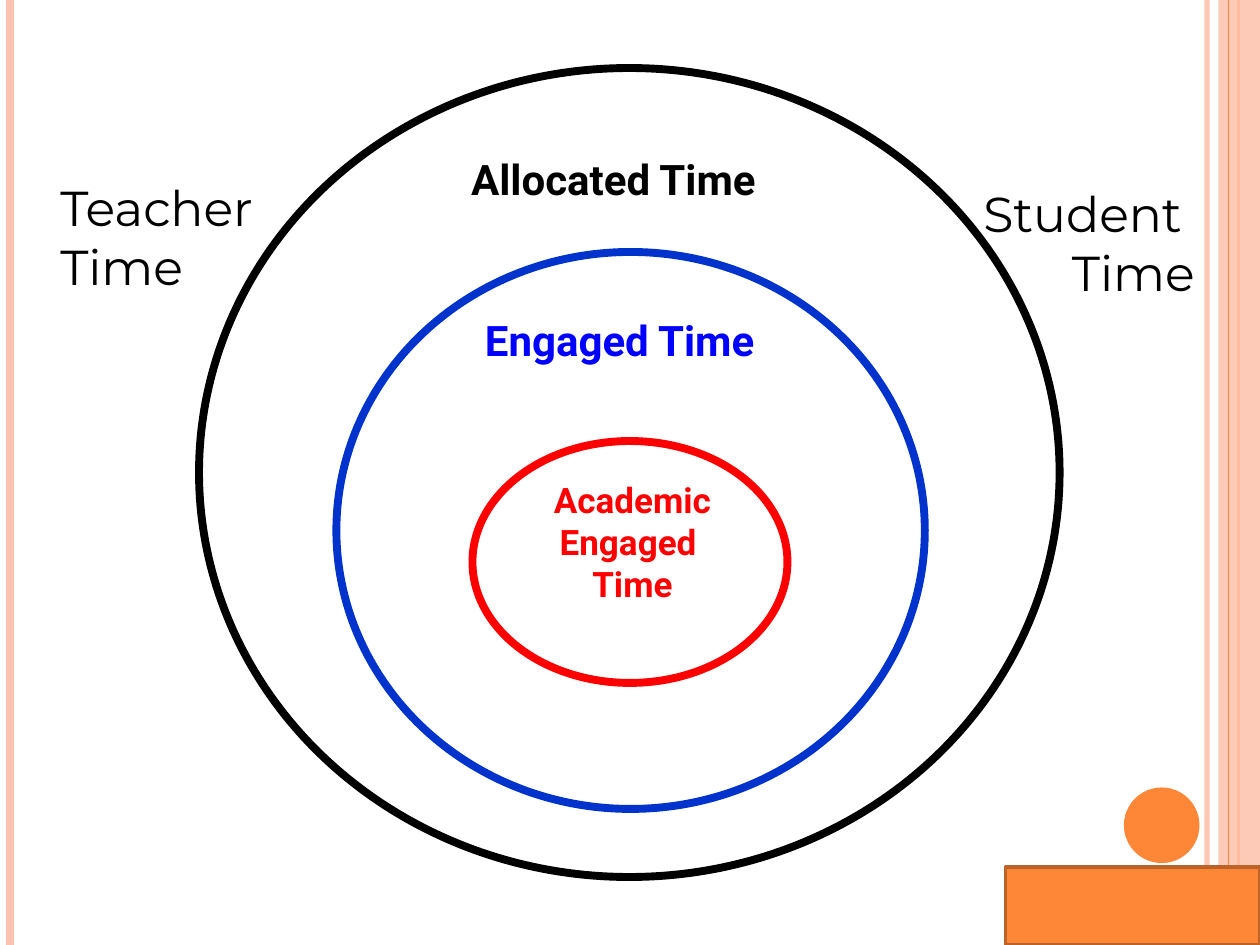
"""Builds a slide of nested circles showing allocated, engaged and academic time."""
from lxml import etree
from pptx import Presentation
from pptx import util as u
from pptx.dml.color import RGBColor
from pptx.enum import shapes, text
from pptx.oxml.ns import qn

COLORS = {"peach": "FEC3AE", "orange": "FE8637", "brown": "BC6329", "red": "FF0000",
          "ring_blue": "0033CC", "blue": "0000FF", "black": "000000"}
OVAL, RECT = shapes.MSO_SHAPE.OVAL, shapes.MSO_SHAPE.RECTANGLE
LEFT, CENTER, RIGHT = text.PP_ALIGN.LEFT, text.PP_ALIGN.CENTER, text.PP_ALIGN.RIGHT


def rgb(name):
    """Return the named colour."""
    return RGBColor.from_string(COLORS[name])


def set_opacity(fill_parent, percent):
    """Make the solid fill of an element partly transparent."""
    color = fill_parent.find(qn("a:solidFill"))[0]
    etree.SubElement(color, qn("a:alpha")).set("val", str(percent * 1000))


def add_stripe(s, x, width, color, opacity=100):
    """Draw a vertical line over the full slide height."""
    sp = s.shapes.add_connector(shapes.MSO_CONNECTOR.STRAIGHT,
                                u.Inches(x), 0, u.Inches(x), u.Inches(7.5))
    sp.line.color.rgb = rgb(color)
    sp.line.width = u.Pt(width)
    if opacity < 100:
        set_opacity(sp.line._get_or_add_ln(), opacity)
    etree.SubElement(sp._element.spPr, qn("a:effectLst"))


def add_figure(s, kind, box, fill=None, line=None, width=4.5, opacity=100):
    """Draw a preset shape with an optional fill and outline."""
    sp = s.shapes.add_shape(kind, *map(u.Inches, box))
    sp.shadow.inherit = False
    if fill:
        sp.fill.solid()
        sp.fill.fore_color.rgb = rgb(fill)
        if opacity < 100:
            set_opacity(sp._element.spPr, opacity)
    else:
        sp.fill.background()
    if line:
        sp.line.color.rgb = rgb(line)
        sp.line.width = u.Pt(width)
    else:
        sp.line.fill.background()


def add_label(s, box, lines, font, color, align=LEFT, wrap=True):
    """Write one paragraph per line in a text box."""
    tf = s.shapes.add_textbox(*map(u.Inches, box)).text_frame
    tf.word_wrap = wrap
    tf.auto_size = text.MSO_AUTO_SIZE.SHAPE_TO_FIT_TEXT
    for i, line in enumerate(lines):
        p = tf.paragraphs[0] if i == 0 else tf.add_paragraph()
        p.alignment = align
        r = p.add_run()
        r.text = line
        r.font.color.rgb = rgb(color)
        for name, value in font.items():
            setattr(r.font, name, value)


def add_decoration(s):
    """Draw the stripes and the dot of the slide frame."""
    add_stripe(s, 9.58, 3, "peach", 93)
    add_stripe(s, 0.08, 4.5, "peach")
    add_stripe(s, 9.83, 1.5, "orange")
    add_figure(s, RECT, (9.67, 0, 0.33, 7.5), fill="peach", opacity=87)
    add_stripe(s, 9.75, 0.75, "orange")
    add_figure(s, OVAL, (8.92, 6.25, 0.6, 0.6), fill="orange")


def main():
    """Build and save the slide."""
    prs = Presentation()
    prs.slide_width, prs.slide_height = u.Inches(10), u.Inches(7.5)
    s = prs.slides.add_slide(prs.slide_layouts[6])
    add_decoration(s)

    inner = {"name": "Roboto", "size": u.Pt(20), "bold": True}
    ring = {**inner, "size": u.Pt(24)}
    side = {"name": "Montserrat", "size": u.Pt(28)}
    add_figure(s, OVAL, (3.75, 3.5, 2.5, 1.92), line="red")
    add_label(s, (4.23, 3.75, 1.58, 1.11), ["Academic", "Engaged ", "Time"],
              inner, "red", CENTER)
    add_figure(s, OVAL, (2.67, 2, 4.67, 4.42), line="ring_blue")
    add_label(s, (3.75, 2.45, 2.59, 0.51), ["Engaged Time"], ring, "blue", wrap=False)
    add_figure(s, OVAL, (1.58, 0.54, 6.83, 6.42), line="black")
    add_label(s, (3.64, 1.17, 2.7, 0.51), ["Allocated Time"], ring, "black", wrap=False)
    add_label(s, (0.38, 1.36, 2.42, 1.04), ["Teacher", "Time"], side, "black")
    add_label(s, (6.83, 1.41, 2.75, 1.04), ["Student ", "Time"], side, "black", RIGHT)
    add_figure(s, RECT, (7.98, 6.88, 2.02, 0.62), fill="orange", line="brown", width=2)
    prs.save("out.pptx")


if __name__ == "__main__":
    main()
